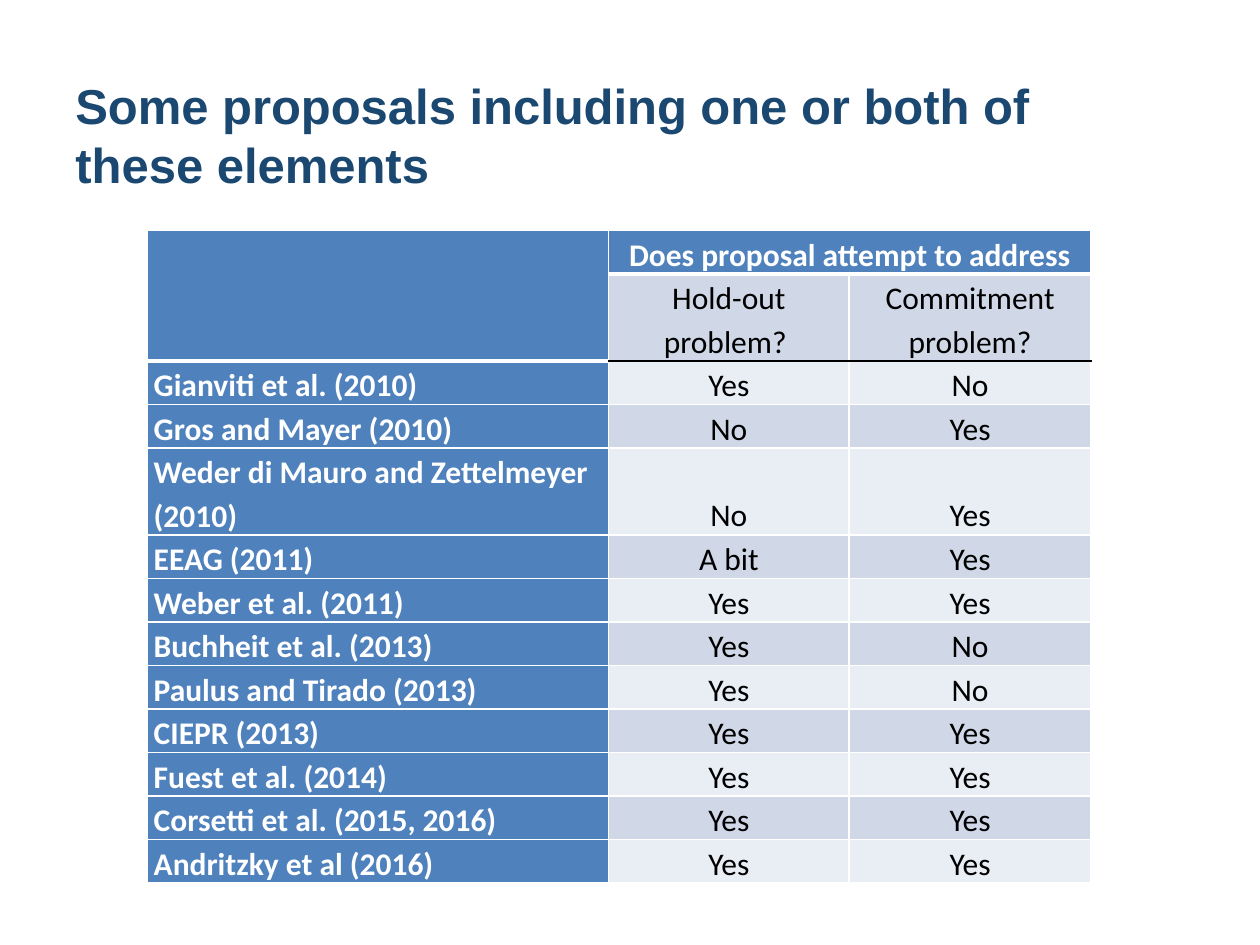
import pptx
import pptx.util
import pptx.dml.color
import pptx.enum.text
from lxml import etree
from pptx.oxml.ns import qn

TITLE = "Some proposals including one or both of these elements"
ROWS = [
    ("", "Does proposal attempt to address", ""),
    ("", "Hold-out problem? ", "Commitment problem?"),
    ("Gianviti et al. (2010)", "Yes", "No"),
    ("Gros and Mayer (2010)", "No", "Yes"),
    ("Weder di Mauro and Zettelmeyer (2010)", "No", "Yes"),
    ("EEAG (2011)", "A bit", "Yes"),
    ("Weber et al. (2011)", "Yes", "Yes"),
    ("Buchheit et al. (2013)", "Yes", "No"),
    ("Paulus and Tirado (2013)", "Yes", "No"),
    ("CIEPR (2013)", "Yes", "Yes"),
    ("Fuest et al. (2014)", "Yes", "Yes"),
    ("Corsetti et al. (2015, 2016)", "Yes", "Yes"),
    ("Andritzky et al (2016)", "Yes", "Yes"),
]
COLORS = {"title": "1B4870", "head": "4F81BD", "odd": "D0D8E8", "even": "E9EDF4",
          "white": "FFFFFF", "black": "000000"}
COL_WIDTHS = (3.66, 1.91, 1.92)
LINE_HEIGHT = 0.33
TWO_LINE_ROWS = (1, 4)

Inches, Pt = pptx.util.Inches, pptx.util.Pt
ALIGN, ANCHOR = pptx.enum.text.PP_ALIGN, pptx.enum.text.MSO_ANCHOR


def rgb(name):
    return pptx.dml.color.RGBColor.from_string(COLORS[name])


def set_font(p, face, size, color, bold):
    f = p.font
    f.name, f.size, f.bold = face, Pt(size), bold
    f.color.rgb = rgb(color)


def set_borders(cell, **special):
    """White 1 pt lines on all sides, except those given as side=(color, points)."""
    for side in "LRTB":
        color, width = special.get(side, ("white", 1))
        ln = etree.SubElement(cell._tc.get_or_add_tcPr(), qn("a:ln" + side), w=str(Pt(width)))
        fill = etree.SubElement(ln, qn("a:solidFill"))
        etree.SubElement(fill, qn("a:srgbClr"), val=COLORS[color])


def special_borders(r, c):
    if r == 0 or (r == 1 and c == 0):
        return {"B": ("white", 3)}
    if r == 1:
        return {"B": ("black", 1)}
    if r == 2 and c > 0:
        return {"T": ("black", 1)}
    return {}


def add_title(s):
    tf = s.shapes.add_textbox(Inches(0.5), Inches(0.63), Inches(8.58), Inches(0.87)).text_frame
    tf.word_wrap = True
    tf.vertical_anchor = ANCHOR.MIDDLE
    p = tf.paragraphs[0]
    p.text = TITLE
    set_font(p, "Arial", 28, "title", True)


def add_proposals(s):
    heights = [LINE_HEIGHT * (2 if r in TWO_LINE_ROWS else 1) for r in range(len(ROWS))]
    table = s.shapes.add_table(len(ROWS), len(COL_WIDTHS), Inches(1.17), Inches(1.83),
                               Inches(sum(COL_WIDTHS)), Inches(sum(heights))).table
    for col, width in zip(table.columns, COL_WIDTHS):
        col.width = Inches(width)
    for row, height in zip(table.rows, heights):
        row.height = Inches(height)
    table.cell(0, 0).merge(table.cell(1, 0))
    table.cell(0, 1).merge(table.cell(0, 2))

    for r, row in enumerate(ROWS):
        for c, text in enumerate(row):
            cell = table.cell(r, c)
            head = r == 0 or c == 0
            set_borders(cell, **special_borders(r, c))
            cell.fill.solid()
            cell.fill.fore_color.rgb = rgb("head" if head else "odd" if r % 2 else "even")
            cell.vertical_anchor = ANCHOR.BOTTOM
            cell.margin_left = cell.margin_right = Inches(0.05)
            cell.margin_top = cell.margin_bottom = 0
            p = cell.text_frame.paragraphs[0]
            if text:
                p.text = text
            p.alignment = ALIGN.CENTER if c else ALIGN.LEFT
            p.line_spacing = 1.15
            set_font(p, "Calibri", 18, "white" if head else "black", head)


def main():
    prs = pptx.Presentation()
    prs.slide_width, prs.slide_height = Inches(10), Inches(7.5)
    s = prs.slides.add_slide(prs.slide_layouts[6])
    add_title(s)
    add_proposals(s)
    prs.save("out.pptx")


if __name__ == "__main__":
    main()
